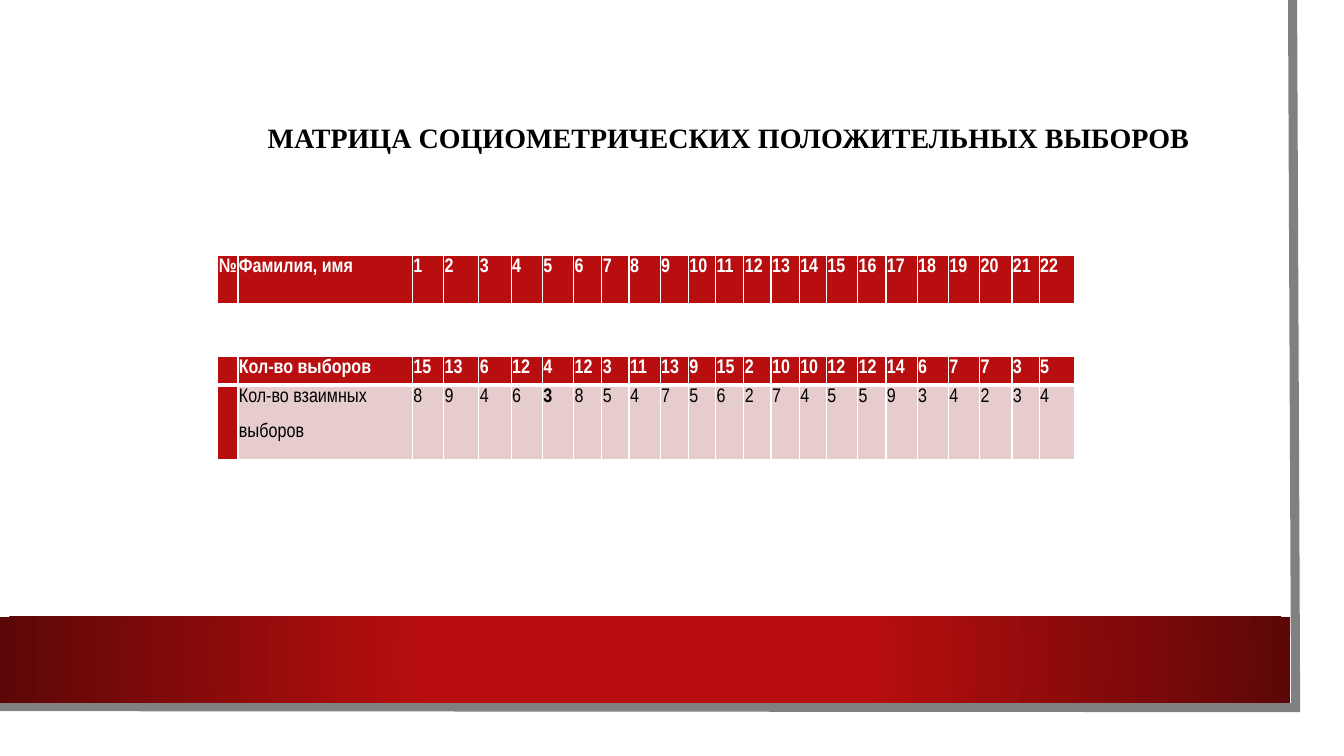
from lxml import etree
from pptx import Presentation
from pptx.dml.color import RGBColor
from pptx.enum.shapes import MSO_SHAPE
from pptx.enum.text import MSO_ANCHOR, PP_ALIGN
from pptx.oxml import parse_xml
from pptx.oxml.ns import nsdecls, qn
from pptx.util import Inches, Pt

COLORS = {"white": "FFFFFF", "black": "000000", "red": "B80E0F",
          "dark_red": "5C0707", "pink": "E6CCCC", "gray": "808080"}
RGB = {name: RGBColor.from_string(value) for name, value in COLORS.items()}

COLUMNS = [0.2, 1.73, 0.31, 0.35, 0.32, 0.31, 0.31, 0.28, 0.27, 0.31, 0.28, 0.27,
           0.28, 0.27, 0.28, 0.27, 0.31, 0.28, 0.31, 0.31, 0.31, 0.32, 0.27, 0.35]
CHOICES = [15, 13, 6, 12, 4, 12, 3, 11, 13, 9, 15, 2, 10, 10, 12, 12, 14, 6, 7, 7, 3, 5]
MUTUAL = [8, 9, 4, 6, 3, 8, 5, 4, 7, 5, 6, 2, 7, 4, 5, 5, 9, 3, 4, 2, 3, 4]
BOLD_MUTUAL_COLUMN = 6


def set_borders(cell, top, bottom):
    tcPr = cell._tc.get_or_add_tcPr()
    for i, (side, width) in enumerate([("L", 1), ("R", 1), ("T", top), ("B", bottom)]):
        tcPr.insert(i, parse_xml(
            f'<a:ln{side} {nsdecls("a")} w="{Pt(width)}"><a:solidFill>'
            f'<a:srgbClr val="{COLORS["white"]}"/></a:solidFill></a:ln{side}>'))


def add_matrix(s, top, rows, heights):
    frame = s.shapes.add_table(len(rows), len(COLUMNS), Inches(2.16), Inches(top),
                               Inches(8.54), Inches(sum(heights)))
    table = frame.table
    for column, width in zip(table.columns, COLUMNS):
        column.width = Inches(width)
    for r_index, (values, height) in enumerate(zip(rows, heights)):
        table.rows[r_index].height = Inches(height)
        header = r_index == 0
        for c_index, value in enumerate(values):
            cell = table.cell(r_index, c_index)
            cell.margin_left = cell.margin_right = Inches(0.01)
            cell.margin_top = cell.margin_bottom = 0
            cell.fill.solid()
            cell.fill.fore_color.rgb = RGB["red" if header or c_index == 0 else "pink"]
            set_borders(cell, 1 if header else 3, 3 if header else 1)
            tf = cell.text_frame
            for i, line in enumerate(str(value).split("\n")):
                p = tf.add_paragraph() if i else tf.paragraphs[0]
                p.line_spacing = 1.15
                p.space_after = Pt(10)
                if not line:
                    etree.SubElement(p._p, qn("a:endParaRPr")).set("sz", "1400")
                    continue
                r = p.add_run()
                r.text = line
                r.font.name = "Arial Narrow"
                r.font.size = Pt(14)
                r.font.bold = header or c_index == BOLD_MUTUAL_COLUMN
                r.font.color.rgb = RGB["white" if header else "black"]


prs = Presentation()
prs.slide_width = Inches(13.33)
prs.slide_height = Inches(7.5)
s = prs.slides.add_slide(prs.slide_layouts[6])

sheet = s.shapes.add_shape(MSO_SHAPE.RECTANGLE, 0, 0, Inches(13.1), Inches(7.27))
sheet.shadow.inherit = False
sheet.fill.solid()
sheet.fill.fore_color.rgb = RGB["white"]
sheet.line.fill.background()

builder = s.shapes.build_freeform(Inches(12.82), 0)
builder.add_line_segments([(Inches(12.85), Inches(7.02)), (Inches(-0.03), Inches(7.01))],
                          close=False)
edge = builder.convert_to_shape()
edge.shadow.inherit = False
edge.fill.background()
edge.line.color.rgb = RGB["gray"]
edge.line.width = Pt(6.5)
etree.SubElement(edge.line._get_or_add_ln(), qn("a:miter")).set("lim", "800000")

band = s.shapes.add_shape(MSO_SHAPE.RECTANGLE, 0, Inches(6.12), Inches(12.8), Inches(0.85))
band.shadow.inherit = False
band.line.fill.background()
band._element.spPr.find(qn("a:prstGeom")).addnext(parse_xml(
    f'<a:gradFill {nsdecls("a")} rotWithShape="1"><a:gsLst>'
    f'<a:gs pos="34000"><a:srgbClr val="{COLORS["red"]}"/></a:gs>'
    f'<a:gs pos="100000"><a:srgbClr val="{COLORS["dark_red"]}"/></a:gs></a:gsLst>'
    '<a:path path="circle"><a:fillToRect l="50000" t="50000" r="50000" b="50000"/></a:path>'
    '</a:gradFill>'))

title = s.shapes.add_textbox(Inches(1.54), Inches(0.75), Inches(11.37), Inches(1.26))
tf = title.text_frame
tf.word_wrap = True
tf.vertical_anchor = MSO_ANCHOR.MIDDLE
p = tf.paragraphs[0]
p.alignment = PP_ALIGN.CENTER
p.line_spacing = 0.9
r = p.add_run()
r.text = "МАТРИЦА СОЦИОМЕТРИЧЕСКИХ ПОЛОЖИТЕЛЬНЫХ ВЫБОРОВ"
r.font.name = "Times New Roman"
r.font.size = Pt(20)
r.font.bold = True
r.font.color.rgb = RGB["black"]

add_matrix(s, 2.53, [["№", "Фамилия, имя", *range(1, 23)]], [0.49])
add_matrix(s, 3.54, [["", "Кол-во выборов", *CHOICES],
                     ["", "Кол-во взаимных\nвыборов", *MUTUAL]], [0.28, 0.74])

prs.save("out.pptx")
